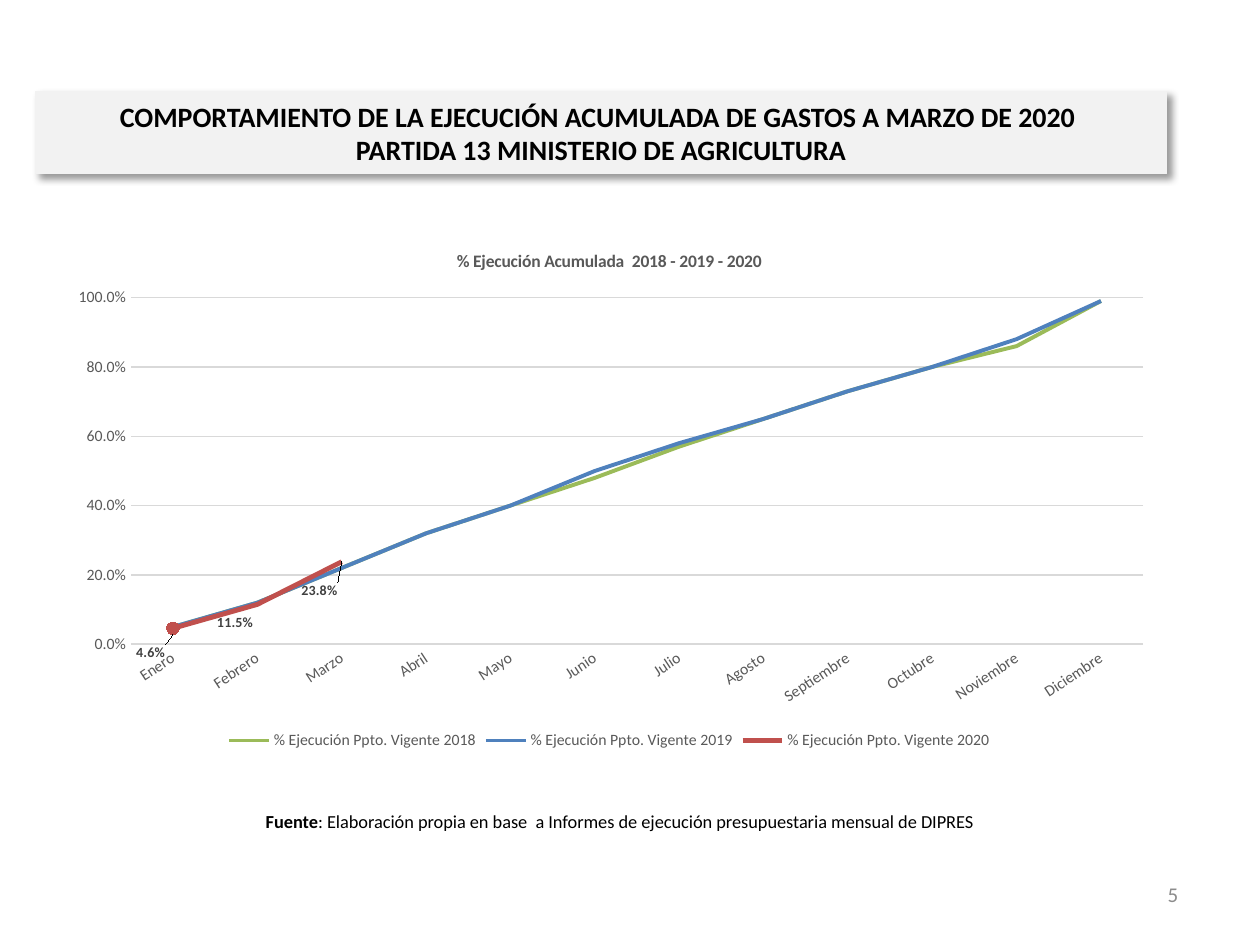
from dataclasses import dataclass

from lxml.etree import SubElement
from pptx import Presentation
from pptx.chart.data import CategoryChartData
from pptx.dml.color import RGBColor
from pptx.enum.chart import (XL_CHART_TYPE, XL_LABEL_POSITION, XL_LEGEND_POSITION,
                             XL_MARKER_STYLE, XL_TICK_MARK)
from pptx.enum.shapes import MSO_SHAPE
from pptx.enum.text import MSO_ANCHOR, PP_ALIGN
from pptx.oxml import parse_xml
from pptx.oxml.ns import nsdecls, qn
from pptx.util import Inches, Pt


@dataclass(frozen=True)
class Theme:
    font: str = "Calibri"
    black: str = "000000"
    gray: str = "595959"
    label: str = "404040"
    page: str = "8C8C8C"
    grid: str = "D9D9D9"
    banner: str = "F2F2F2"
    title_size: float = 16
    page_size: float = 12
    source_size: float = 10.5
    chart_title_size: float = 10
    axis_size: float = 9
    label_size: float = 8


@dataclass(frozen=True)
class Series:
    year: int
    color: str
    width: float
    values: tuple


T = Theme()
MONTHS = ("Enero Febrero Marzo Abril Mayo Junio Julio Agosto "
          "Septiembre Octubre Noviembre Diciembre").split()
SERIES = (
    Series(2018, "9BBB59", 2.25,
           (0.05, 0.12, 0.22, 0.32, 0.4, 0.48, 0.57, 0.65, 0.73, 0.8, 0.86, 0.99)),
    Series(2019, "4F81BD", 2.25,
           (0.05, 0.12, 0.22, 0.32, 0.4, 0.5, 0.58, 0.65, 0.73, 0.8, 0.88, 0.99)),
    Series(2020, "C0504D", 2.75, (0.046, 0.115, 0.238)),
)
# Shift of each 2020 label, as fractions of the chart
LABEL_SHIFTS = ((-0.02, 0.01), (-0.02, 0.01), (-0.02, 0.03))


def rgb(color: str) -> RGBColor:
    return RGBColor.from_string(color)


def style(font, size: float, color: str, bold: bool = False) -> None:
    font.name, font.size, font.bold = T.font, Pt(size), bold
    font.color.rgb = rgb(color)


def write(tf, text: str, *, size: float, color: str = T.black, bold: bool = False,
          align=PP_ALIGN.CENTER) -> None:
    """Append text to the first paragraph; a newline makes a line break."""
    tf.word_wrap = True
    tf.vertical_anchor = MSO_ANCHOR.MIDDLE
    p = tf.paragraphs[0]
    p.alignment = align
    for i, line in enumerate(text.split("\n")):
        if i:
            p.add_line_break()
        r = p.add_run()
        r.text = line
        style(r.font, size, color, bold)


def text_box(s, x: float, y: float, w: float, h: float):
    return s.shapes.add_textbox(Inches(x), Inches(y), Inches(w), Inches(h)).text_frame


def manual_layout(**values):
    """Chart layout element; keys are the child names in schema order."""
    layout = parse_xml(f"<c:layout {nsdecls('c')}/>")
    manual = SubElement(layout, qn("c:manualLayout"))
    for name, value in values.items():
        SubElement(manual, qn(f"c:{name}")).set("val", str(value))
    return layout


def add_banner(s) -> None:
    sp = s.shapes.add_shape(MSO_SHAPE.RECTANGLE, Inches(0.28), Inches(0.73),
                            Inches(8.98), Inches(0.65))
    sp.fill.solid()
    sp.fill.fore_color.rgb = rgb(T.banner)
    sp.line.color.rgb = rgb(T.banner)
    sp.line.width = Pt(0.75)
    sp.shadow.inherit = False
    effects = sp._element.spPr.find(qn("a:effectLst"))
    effects.append(parse_xml(
        f'<a:outerShdw {nsdecls("a")} blurRad="{Pt(4)}" dist="{Pt(3)}" dir="2700000" '
        'algn="tl" rotWithShape="0"><a:srgbClr val="000000">'
        '<a:alpha val="40000"/></a:srgbClr></a:outerShdw>'))
    write(sp.text_frame, "COMPORTAMIENTO DE LA EJECUCIÓN ACUMULADA DE GASTOS A MARZO DE 2020 \n"
          "PARTIDA 13 MINISTERIO DE AGRICULTURA", size=T.title_size, bold=True)


def format_axes(chart) -> None:
    cat, val = chart.category_axis, chart.value_axis
    for axis in (cat, val):
        axis.major_tick_mark = axis.minor_tick_mark = XL_TICK_MARK.NONE
        style(axis.tick_labels.font, T.axis_size, T.gray)
    cat.format.line.color.rgb = rgb(T.grid)
    cat.format.line.width = Pt(1)
    cat._element.find(qn("c:txPr")).find(qn("a:bodyPr")).set("rot", "-2000000")
    val.minimum_scale, val.maximum_scale, val.major_unit = 0, 1, 0.2
    val.tick_labels.number_format = "0.0%"
    val.tick_labels.number_format_is_linked = False
    val.format.line.fill.background()
    val.major_gridlines.format.line.color.rgb = rgb(T.grid)
    val.major_gridlines.format.line.width = Pt(0.75)


def format_series(plot) -> None:
    for line, data in zip(plot.series, SERIES):
        line.smooth = False
        line.marker.style = XL_MARKER_STYLE.NONE
        line.format.line.color.rgb = rgb(data.color)
        line.format.line.width = Pt(data.width)

    # Labels and first marker of the current year
    current, color = plot.series[-1], rgb(SERIES[-1].color)
    for i, (dx, dy) in enumerate(LABEL_SHIFTS):
        label = current.points[i].data_label
        style(label.font, T.label_size, T.label, bold=True)
        label.position = XL_LABEL_POSITION.BELOW
        item = current._element.find(qn("c:dLbls")).findall(qn("c:dLbl"))[i]
        item.insert(1, manual_layout(x=dx, y=dy))
    first = current.points[0]
    first.marker.style, first.marker.size = XL_MARKER_STYLE.CIRCLE, 7
    first.marker.format.fill.solid()
    first.marker.format.fill.fore_color.rgb = color
    first.marker.format.line.color.rgb = color
    first.format.line.color.rgb = color
    first.format.line.width = Pt(SERIES[-1].width)


def add_chart(s) -> None:
    data = CategoryChartData(number_format="0.0%")
    data.categories = MONTHS
    for item in SERIES:
        data.add_series(f"% Ejecución Ppto. Vigente {item.year}", item.values)
    chart = s.shapes.add_chart(XL_CHART_TYPE.LINE, Inches(0.42), Inches(1.82),
                               Inches(8.83), Inches(4.17), data).chart
    style(chart.font, T.chart_title_size, T.black)
    chart.plots[0].vary_by_categories = False

    # Title and legend
    chart.has_title = True
    write(chart.chart_title.text_frame, "% Ejecución Acumulada  2018 - 2019 - 2020",
          size=T.chart_title_size, color=T.gray, bold=True)
    chart.has_legend = True
    chart.legend.position = XL_LEGEND_POSITION.BOTTOM
    chart.legend.include_in_layout = False
    style(chart.legend.font, T.axis_size, T.gray)

    format_axes(chart)
    format_series(chart.plots[0])

    # Plot area
    area = chart._chartSpace.chart.plotArea
    for old in area.findall(qn("c:layout")):
        area.remove(old)
    area.insert(0, manual_layout(layoutTarget="inner", xMode="edge", yMode="edge",
                                 x=0.07, y=0.13, w=0.91, h=0.66))


def main() -> None:
    prs = Presentation()
    prs.slide_width, prs.slide_height = Inches(10), Inches(7.5)
    s = prs.slides.add_slide(prs.slide_layouts[6])

    # Page number
    write(text_box(s, 7.12, 6.9, 2.33, 0.4), "5", size=T.page_size, color=T.page,
          align=PP_ALIGN.RIGHT)
    add_banner(s)

    # Source line
    tf = text_box(s, 1.02, 6.32, 7.8, 0.4)
    write(tf, "Fuente", size=T.source_size, bold=True)
    write(tf, ": Elaboración propia en base  a Informes de ejecución presupuestaria "
          "mensual de DIPRES", size=T.source_size)
    add_chart(s)
    prs.save("out.pptx")


if __name__ == "__main__":
    main()
